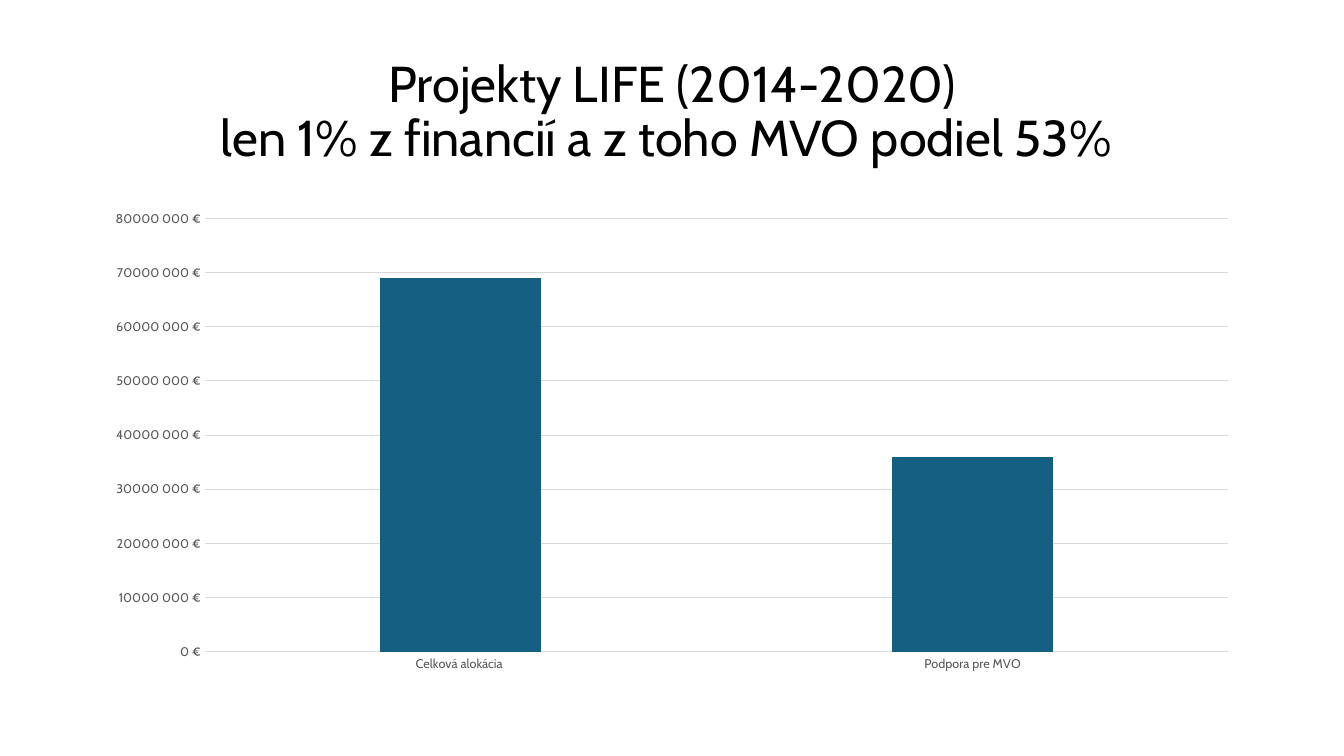
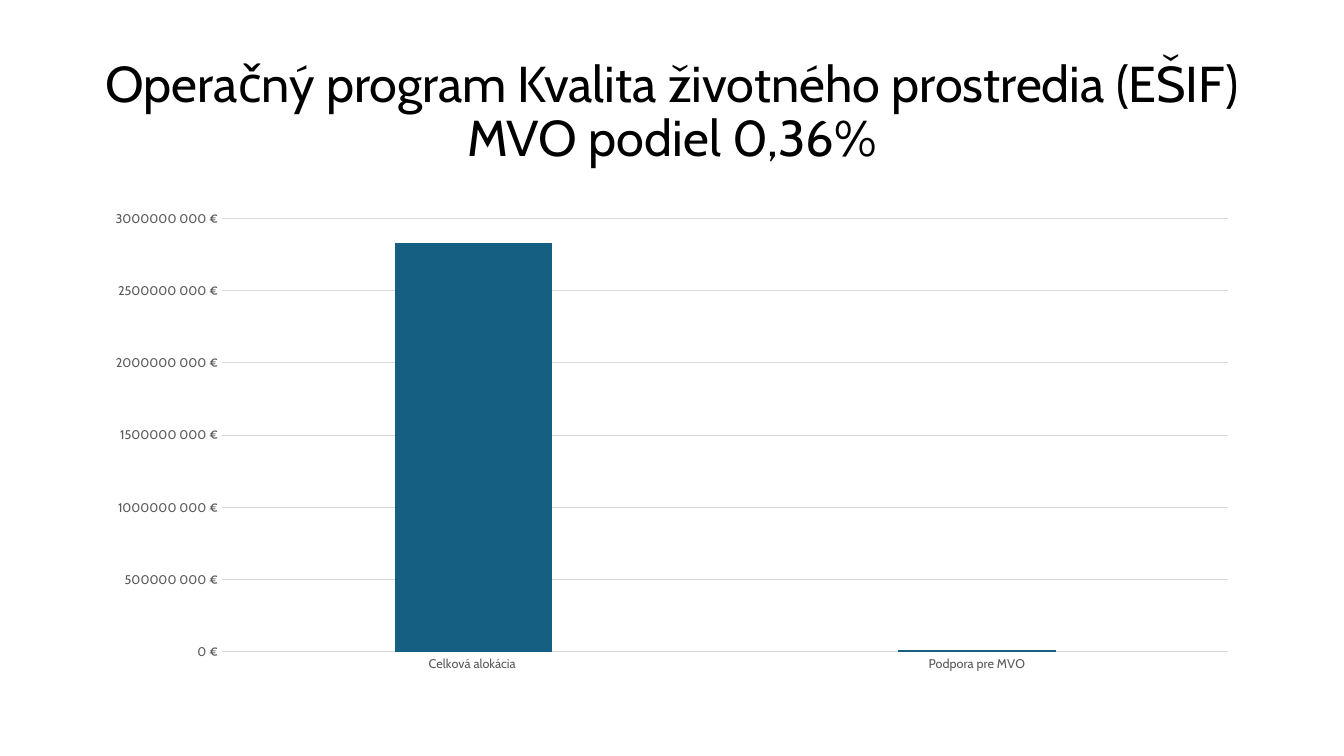
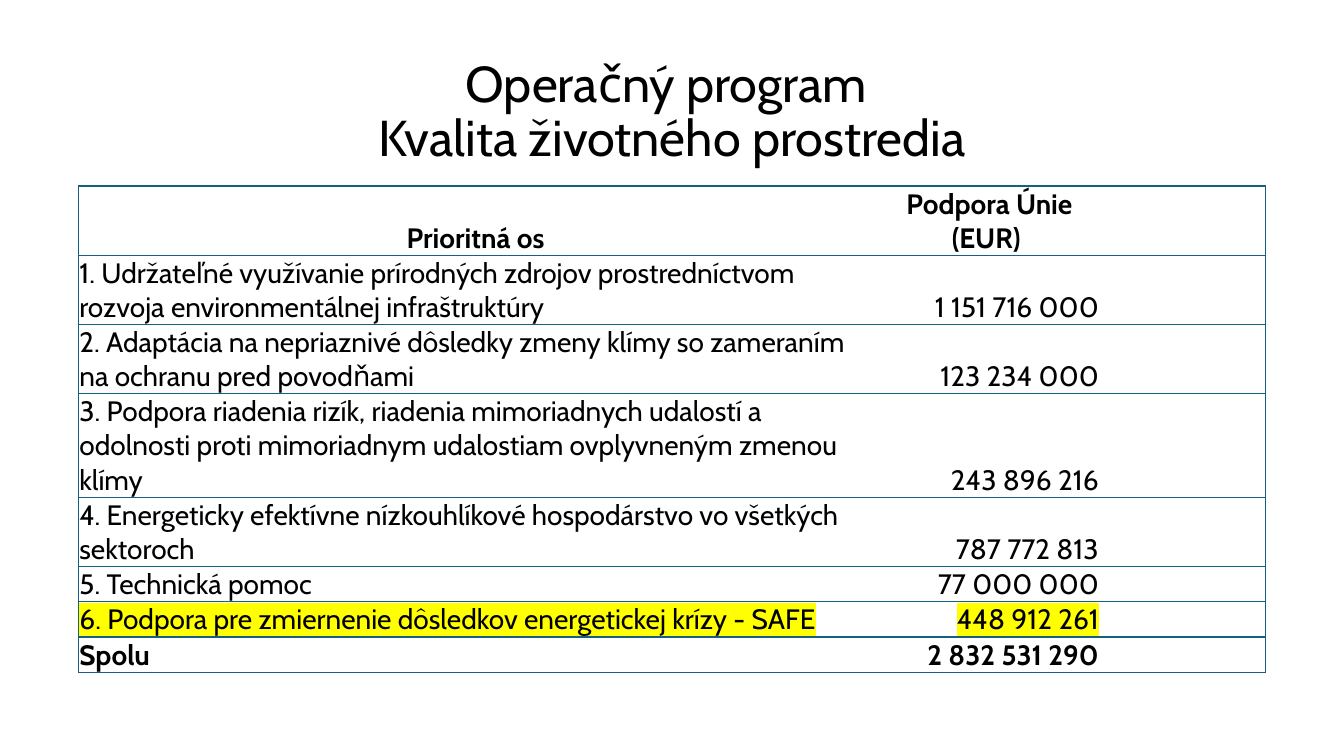
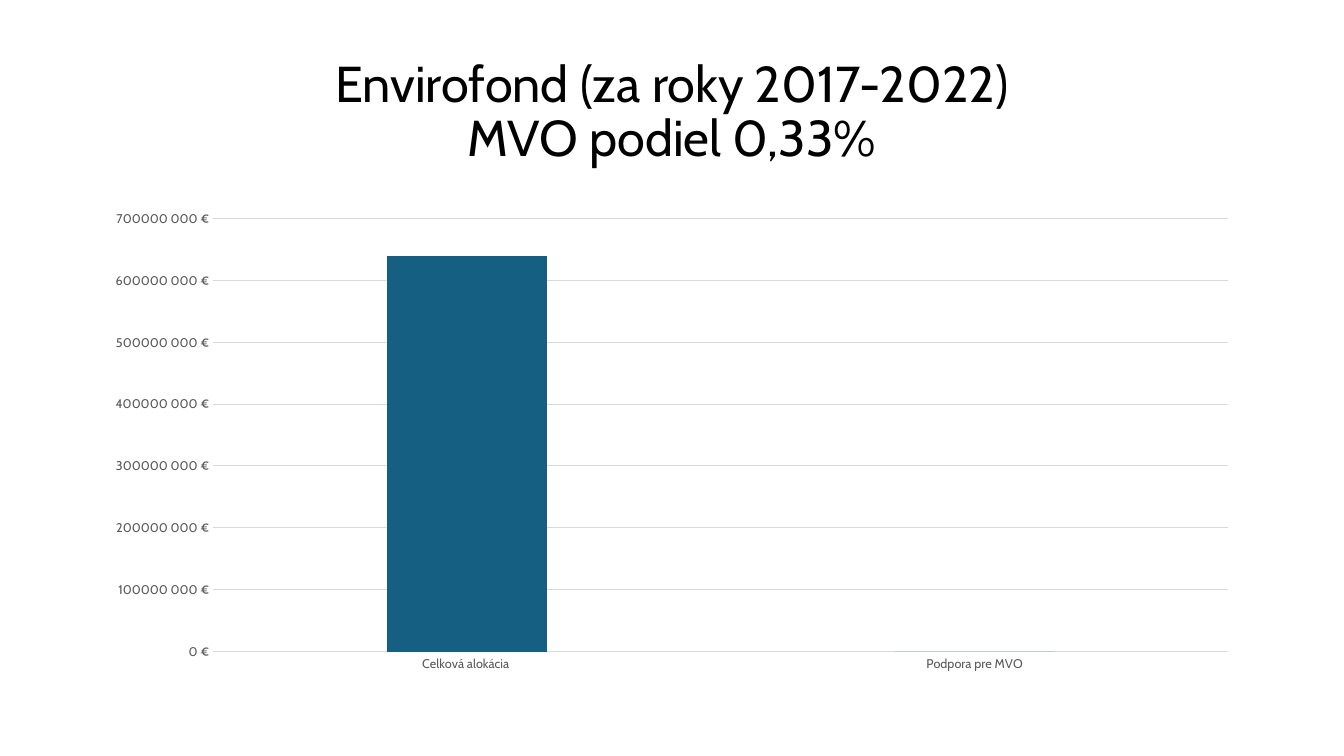
from lxml.etree import SubElement
from pptx import Presentation
from pptx.chart.data import CategoryChartData
from pptx.dml.color import RGBColor
from pptx.enum.chart import XL_CHART_TYPE as ChartType, XL_TICK_MARK as Tick
from pptx.enum.text import MSO_ANCHOR as Anchor, PP_ALIGN as Align
from pptx.oxml.ns import qn
from pptx.util import Pt

FONT = "Cabin"
BLACK, WHITE, GREY, PALE, TEAL, YELLOW = (
    "000000", "FFFFFF", "595959", "D9D9D9", "156082", "FFFF00")
SLIDE_WIDTH, SLIDE_HEIGHT = 960, 540
CONTENT_WIDTH = 828
MARGIN = (SLIDE_WIDTH - CONTENT_WIDTH) / 2
TITLE_BOX = (MARGIN, 28.8, CONTENT_WIDTH, 104.4)
CHART_BOX = (MARGIN, 143.7, CONTENT_WIDTH, 342.7)

CATEGORIES = ["Celková alokácia ", "Podpora pre MVO"]
EURO_FORMAT = '#\\ ##0\\ "€"'

HEADINGS = ("Prioritná os", " Podpora Únie (EUR)")
PRIORITIES = [
    ("1. Udržateľné využívanie prírodných zdrojov prostredníctvom rozvoja environmentálnej infraštruktúry", "1 151 716 000"),
    ("2. Adaptácia na nepriaznivé dôsledky zmeny klímy so zameraním na ochranu pred povodňami", "123 234 000"),
    ("3. Podpora riadenia rizík, riadenia mimoriadnych udalostí a odolnosti proti mimoriadnym udalostiam ovplyvneným zmenou klímy", "243 896 216"),
    ("4. Energeticky efektívne nízkouhlíkové hospodárstvo vo všetkých sektoroch", "787 772 813"),
    ("5. Technická pomoc", "77 000 000"),
    ("6. Podpora pre zmiernenie dôsledkov energetickej krízy - SAFE", "448 912 261"),
]
TOTAL = ("Spolu", "2 832 531 290")
HIGHLIGHTED = PRIORITIES[5]
COLUMN_WIDTHS = (567.4, 162.2, 118.6)
ROW_HEIGHTS = (47.5, 47.5, 47.5, 47.5, 47.5, 25.2, 25.2, 25.2)
TABLE_LEFT, TABLE_TOP = 56, 132.9

SLIDES = [
    {"title": "Projekty LIFE (2014-2020)\vlen 1% z financií a z toho MVO podiel 53% ",
     "amounts": (69000000, 36000000), "top": 80000000, "step": 10000000},
    {"title": "Operačný program Kvalita životného prostredia (EŠIF) MVO podiel 0,36%",
     "amounts": (2830000000, 10000000), "top": 3000000000, "step": 500000000},
    {"title": "Operačný program \vKvalita životného prostredia"},
    {"title": "Envirofond (za roky 2017-2022)\vMVO podiel 0,33%",
     "amounts": (640000000, 0), "top": 700000000, "step": 100000000},
]


def colour(code):
    return RGBColor.from_string(code)


def assign(target, **values):
    for name, value in values.items():
        setattr(target, name, value)


def points(box):
    return [Pt(length) for length in box]


def style_font(font, size, code=BLACK, bold=False):
    assign(font, size=Pt(size), name=FONT, bold=bold)
    font.color.rgb = colour(code)


def style_line(line, code, width=0.75):
    line.color.rgb = colour(code)
    line.width = Pt(width)


def add_solid(parent, code):
    SubElement(SubElement(parent, qn("a:solidFill")), qn("a:srgbClr")).set("val", code)


def place_title(slide, wording):
    title = slide.shapes.title
    left, top, width, height = points(TITLE_BOX)
    assign(title, left=left, top=top, width=width, height=height)
    frame = title.text_frame
    assign(frame, text=wording, vertical_anchor=Anchor.MIDDLE, word_wrap=True)
    paragraph = frame.paragraphs[0]
    assign(paragraph, alignment=Align.CENTER, line_spacing=0.9)
    for run in paragraph.runs:
        style_font(run.font, 36)


def add_allocation_chart(slide, amounts, top, step):
    allocation = CategoryChartData()
    allocation.categories = CATEGORIES
    allocation.add_series("Series 1", amounts)
    chart = slide.shapes.add_chart(
        ChartType.COLUMN_CLUSTERED, *points(CHART_BOX), allocation).chart
    assign(chart, has_title=False, has_legend=False)
    style_font(chart.font, 10)

    columns = chart.plots[0]
    assign(columns, gap_width=219, overlap=-27, vary_by_categories=False)
    bars = columns.series[0]
    bars.invert_if_negative = False
    bars.format.fill.solid()
    bars.format.fill.fore_color.rgb = colour(TEAL)

    for axis in (chart.category_axis, chart.value_axis):
        assign(axis, major_tick_mark=Tick.NONE, minor_tick_mark=Tick.NONE)
        style_font(axis.tick_labels.font, 9, GREY)
    style_line(chart.category_axis.format.line, PALE)

    euros = chart.value_axis
    assign(euros, minimum_scale=0, maximum_scale=top, major_unit=step, has_major_gridlines=True)
    assign(euros.tick_labels, number_format=EURO_FORMAT, number_format_is_linked=False)
    style_line(euros.major_gridlines.format.line, PALE)
    euros.format.line.fill.background()


def draw_borders(cell, sides):
    properties = cell._tc.get_or_add_tcPr()
    for side in "LRTB":
        border = SubElement(properties, qn(f"a:ln{side}"), w=str(Pt(1)))
        if side in sides:
            add_solid(border, TEAL)
        else:
            SubElement(border, qn("a:noFill"))


def highlight(run):
    mark = SubElement(run._r.get_or_add_rPr(), qn("a:highlight"))
    SubElement(mark, qn("a:srgbClr")).set("val", YELLOW)
    run.font._rPr.find(qn("a:solidFill")).addnext(mark)


def add_priority_table(slide):
    rows = [HEADINGS, *PRIORITIES, TOTAL]
    box = (TABLE_LEFT, TABLE_TOP, sum(COLUMN_WIDTHS), sum(ROW_HEIGHTS))
    table = slide.shapes.add_table(len(rows), len(COLUMN_WIDTHS), *points(box)).table
    assign(table, first_row=False, horz_banding=False)
    for column, width in zip(table.columns, COLUMN_WIDTHS):
        column.width = Pt(width)
    for row, height, entries in zip(table.rows, ROW_HEIGHTS, rows):
        row.height = Pt(height)
        layout = zip(row.cells, (*entries, ""), (Align.LEFT, Align.RIGHT, Align.LEFT), ("LTB", "TB", "RTB"))
        for cell, wording, alignment, sides in layout:
            draw_borders(cell, sides)
            cell.fill.solid()
            cell.fill.fore_color.rgb = colour(WHITE)
            assign(cell, vertical_anchor=Anchor.BOTTOM, margin_left=Pt(0.7), margin_right=Pt(0.7),
                   margin_top=Pt(0.7), margin_bottom=0)
            if not wording:
                continue
            cell.text = wording
            paragraph = cell.text_frame.paragraphs[0]
            paragraph.alignment = Align.CENTER if entries == HEADINGS else alignment
            run = paragraph.runs[0]
            style_font(run.font, 20, bold=entries in (HEADINGS, TOTAL))
            if entries == HIGHLIGHTED:
                highlight(run)


def main():
    deck = Presentation()
    assign(deck, slide_width=Pt(SLIDE_WIDTH), slide_height=Pt(SLIDE_HEIGHT))
    for content in SLIDES:
        slide = deck.slides.add_slide(deck.slide_layouts[5])
        place_title(slide, content["title"])
        if "amounts" in content:
            add_allocation_chart(slide, content["amounts"], content["top"], content["step"])
        else:
            add_priority_table(slide)
    deck.save("out.pptx")


if __name__ == "__main__":
    main()
